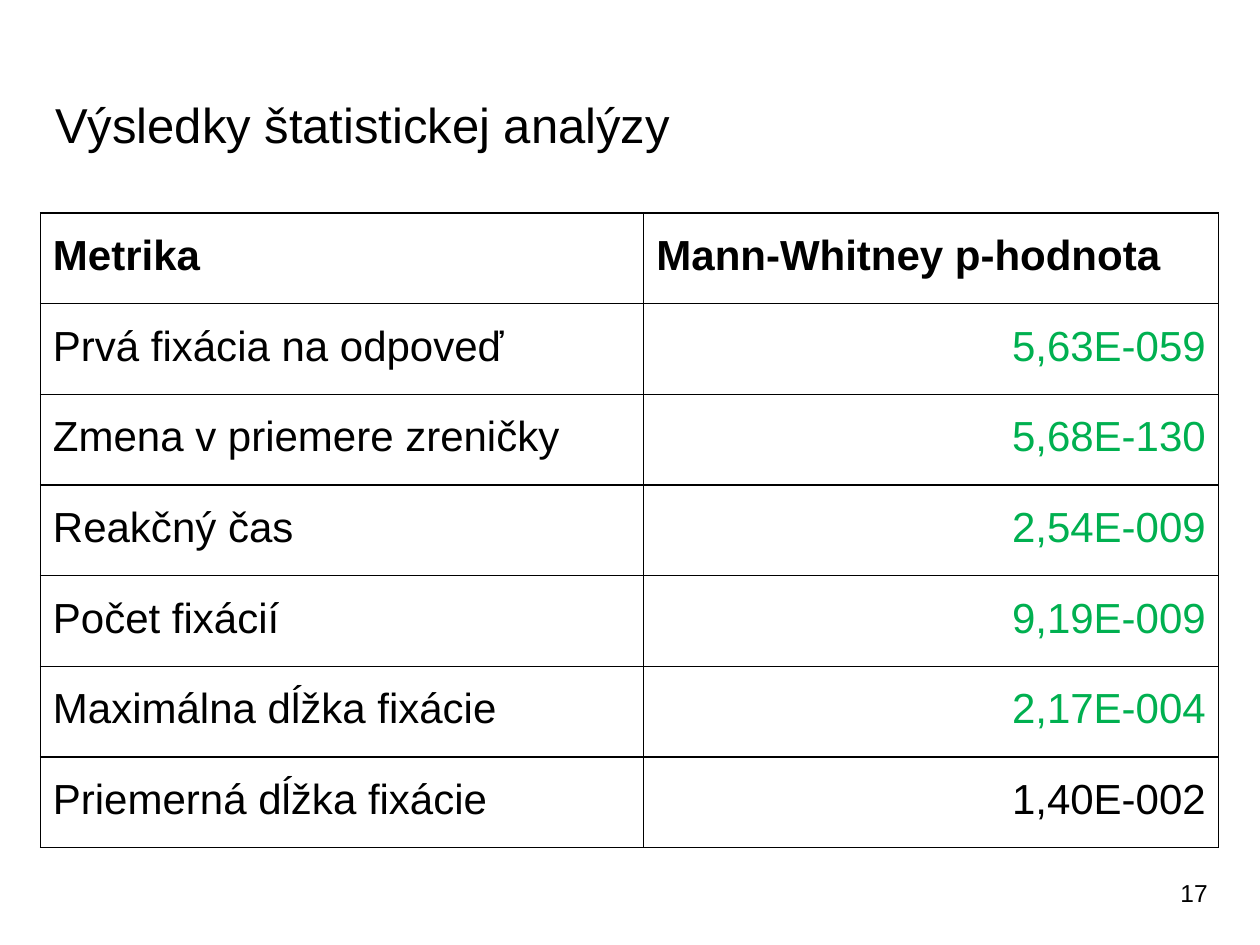
from dataclasses import dataclass

from lxml import etree
from pptx import Presentation
from pptx import util as u
from pptx.dml.color import RGBColor
from pptx.enum import text
from pptx.oxml import ns

BLACK = RGBColor(0x00, 0x00, 0x00)
GREEN = RGBColor(0x00, 0xB0, 0x50)
FONT = "Arial"
INSET = u.Inches(0.1)
ROW_HEIGHT = u.Inches(0.72)
COLUMN_WIDTHS = (u.Inches(4.79), u.Inches(4.56))
BORDER_WIDTH = u.Pt(0.75)


@dataclass(frozen=True)
class Label:
    content: str
    left: float
    top: float
    width: float
    height: float
    size: int
    anchor: text.MSO_ANCHOR


@dataclass(frozen=True)
class Metric:
    name: str
    p_value: str
    color: RGBColor = GREEN


LABELS = (
    Label("Výsledky štatistickej analýzy", 0.34, 0.65, 9.32, 0.83, 28, text.MSO_ANCHOR.TOP),
    Label("17", 9.27, 6.8, 0.6, 0.57, 14, text.MSO_ANCHOR.MIDDLE),
)
HEADINGS = ("Metrika", "Mann-Whitney p-hodnota")
METRICS = (
    Metric("Prvá fixácia na odpoveď", "5,63E-059"),
    Metric("Zmena v priemere zreničky", "5,68E-130"),
    Metric("Reakčný čas", "2,54E-009"),
    Metric("Počet fixácií", "9,19E-009"),
    Metric("Maximálna dĺžka fixácie", "2,17E-004"),
    Metric("Priemerná dĺžka fixácie", "1,40E-002", BLACK),
)


def set_insets(target) -> None:
    target.margin_left = target.margin_right = INSET
    target.margin_top = target.margin_bottom = INSET


def format_runs(paragraph, size: int, color: RGBColor = BLACK, bold: bool = False) -> None:
    for run in paragraph.runs:
        run.font.name = FONT
        run.font.size = u.Pt(size)
        run.font.bold = bold
        run.font.color.rgb = color


def add_label(slide, label: Label) -> None:
    box = slide.shapes.add_textbox(
        u.Inches(label.left), u.Inches(label.top), u.Inches(label.width), u.Inches(label.height)
    )
    frame = box.text_frame
    frame.word_wrap = True
    frame.vertical_anchor = label.anchor
    set_insets(frame)
    frame.text = label.content
    format_runs(frame.paragraphs[0], label.size)


def add_borders(cell) -> None:
    properties = cell._tc.get_or_add_tcPr()
    for index, side in enumerate(("lnL", "lnR", "lnT", "lnB")):
        line = etree.Element(ns.qn(f"a:{side}"), w=str(BORDER_WIDTH))
        fill = etree.SubElement(line, ns.qn("a:solidFill"))
        etree.SubElement(fill, ns.qn("a:srgbClr"), val=str(BLACK))
        properties.insert(index, line)


def fill_cell(
    cell,
    content: str,
    alignment: text.PP_ALIGN = text.PP_ALIGN.JUSTIFY,
    color: RGBColor = BLACK,
    bold: bool = False,
) -> None:
    cell.fill.background()
    add_borders(cell)
    set_insets(cell)
    cell.text_frame.text = content
    paragraph = cell.text_frame.paragraphs[0]
    paragraph.alignment = alignment
    paragraph.line_spacing = 1.15
    format_runs(paragraph, 24, color, bold)


def add_results_table(slide) -> None:
    row_count = len(METRICS) + 1
    table = slide.shapes.add_table(
        row_count, len(HEADINGS), u.Inches(0.32), u.Inches(1.69),
        sum(COLUMN_WIDTHS), ROW_HEIGHT * row_count,
    ).table
    table.first_row = False
    table.horz_banding = False
    for column, width in zip(table.columns, COLUMN_WIDTHS):
        column.width = width
    for row in table.rows:
        row.height = ROW_HEIGHT
    for column_index, heading in enumerate(HEADINGS):
        fill_cell(table.cell(0, column_index), heading, bold=True)
    for row_index, metric in enumerate(METRICS, start=1):
        fill_cell(table.cell(row_index, 0), metric.name)
        fill_cell(table.cell(row_index, 1), metric.p_value, text.PP_ALIGN.RIGHT, metric.color)


def main() -> None:
    presentation = Presentation()
    presentation.slide_width = u.Inches(10)
    presentation.slide_height = u.Inches(7.5)
    slide = presentation.slides.add_slide(presentation.slide_layouts[6])
    for label in LABELS:
        add_label(slide, label)
    add_results_table(slide)
    presentation.save("out.pptx")


if __name__ == "__main__":
    main()
